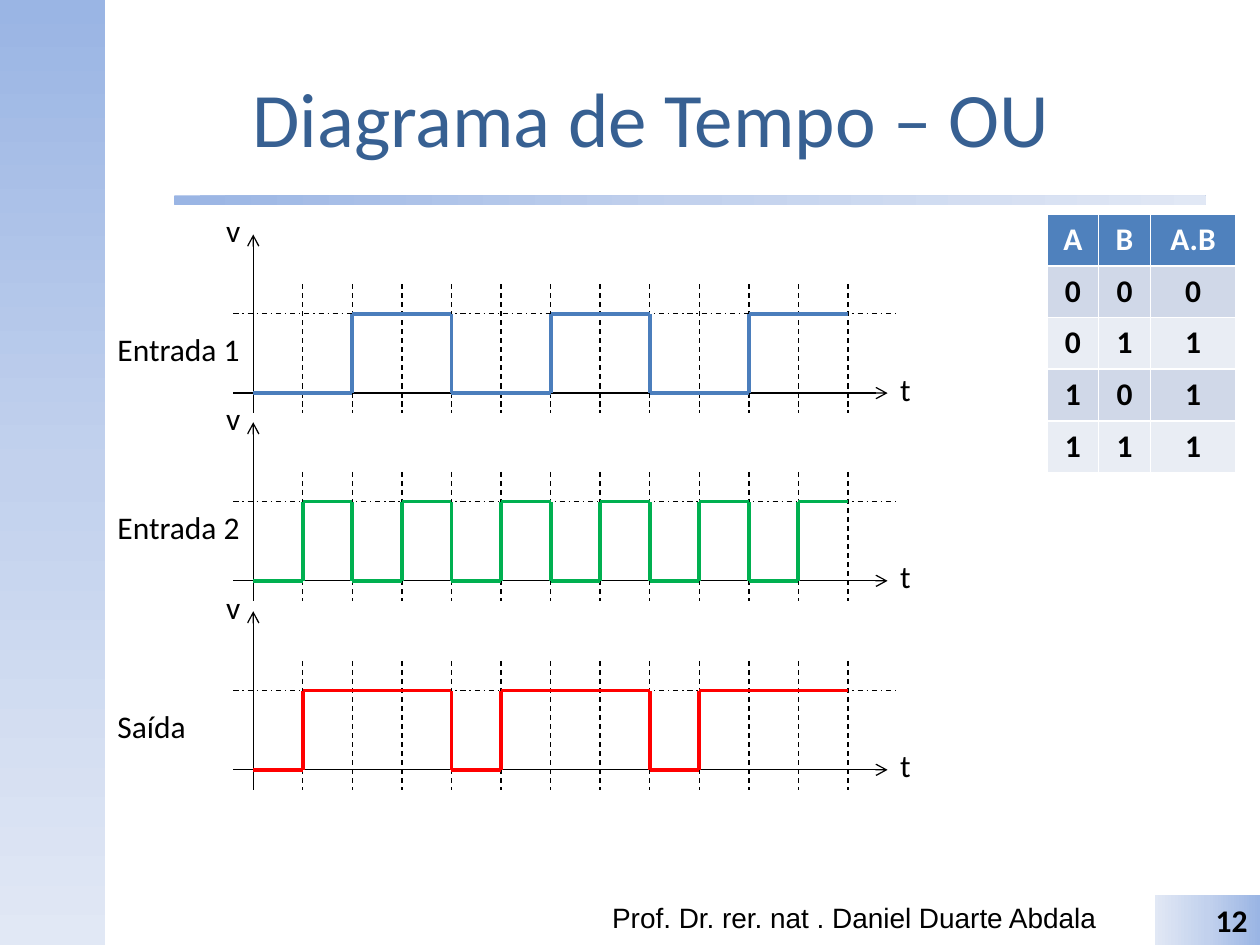
"""Build a slide with the timing diagram and truth table of an OR gate."""
from lxml import etree
from pptx import Presentation
from pptx import util as u
from pptx.dml.color import RGBColor
from pptx.enum import dml, shapes, text
from pptx.oxml.ns import qn

COLORS = {
    "black": "000000", "white": "FFFFFF", "title": "376092",
    "deep": "9AB5E4", "mid": "C2D1ED", "pale": "E1E8F5",
    "input 1": "4B7EBC", "input 2": "00B050", "output": "FF0000",
    "header": "4F81BD", "odd": "D0D8E8", "even": "E9EDF4",
}
W, H = 10, 7.5
ORIGIN, SLOTS = 2.01, 12
SLOT = 4.72 / SLOTS
HIGH = -1.6


def write(frame, content, size=18, font="Calibri", color="black", bold=False,
          align="LEFT", anchor="TOP", wrap=True):
    frame.word_wrap = wrap
    frame.auto_size = text.MSO_AUTO_SIZE.NONE if wrap else text.MSO_AUTO_SIZE.SHAPE_TO_FIT_TEXT
    frame.vertical_anchor = text.MSO_ANCHOR[f"{anchor}"]
    paragraph = frame.paragraphs[0]
    paragraph.alignment = text.PP_ALIGN[align]
    run = paragraph.add_run()
    run.text = content
    run.font.size, run.font.name, run.font.bold = u.Pt(size), font, bold
    run.font.color.rgb = RGBColor.from_string(COLORS[color])


def draw_line(canvas, base, start, end, color="black", width=0.75, dash=None, arrow=False):
    (x1, y1), (x2, y2) = [
        (u.Inches(ORIGIN + col * SLOT), u.Inches(base + row * SLOT)) for col, row in (start, end)]
    stroke = canvas.add_connector(shapes.MSO_CONNECTOR.STRAIGHT, x1, y1, x2, y2)
    stroke.line.color.rgb = RGBColor.from_string(COLORS[color])
    stroke.line.width = u.Pt(width)
    if dash:
        stroke.line.dash_style = dash
    properties = stroke._element.spPr
    if arrow:
        etree.SubElement(properties.find(qn("a:ln")), qn("a:tailEnd"), type="arrow")
    etree.SubElement(properties, qn("a:effectLst"))


deck = Presentation()
deck.slide_width, deck.slide_height = u.Inches(W), u.Inches(H)
slide = deck.slides.add_slide(deck.slide_layouts[5])

heading = slide.shapes.title
heading.left, heading.top, heading.width, heading.height = map(u.Inches, (W / 12, 0.3, 8.67, 1.25))
write(heading.text_frame, "Diagrama de Tempo – OU", size=44, color="title",
      align="CENTER", anchor="MIDDLE")

bands = [
    ("RECTANGLE", (0, 0, W / 12, H), 270, ""),
    ("ROUNDED_RECTANGLE", (1.38, 1.55, 8.19, 0.08), 0, ""),
    ("RECTANGLE", (W * 11 / 12, 7.1, W / 12, 0.4), 180, "12"),
]
for outline, place, angle, page in bands:
    band = slide.shapes.add_shape(shapes.MSO_SHAPE[outline], *map(u.Inches, place))
    band.shadow.inherit = False
    band.line.fill.background()
    band.fill.gradient()
    band.fill.gradient_angle = angle
    stops = band._element.spPr.find(qn("a:gradFill")).find(qn("a:gsLst"))
    for stop in list(stops):
        stops.remove(stop)
    for share, shade in ((0, "deep"), (50, "mid"), (100, "pale")):
        stop = etree.SubElement(stops, qn("a:gs"), pos=str(share * 1000))
        etree.SubElement(stop, qn("a:srgbClr"), val=COLORS[shade])
    if page:
        write(band.text_frame, page, bold=True, align="RIGHT", anchor="MIDDLE")

author = slide.shapes.add_textbox(*map(u.Inches, (4.76, 7.1, 4.19, 0.4)))
write(author.text_frame, "Prof. Dr. rer. nat . Daniel Duarte Abdala", size=16, font="Arial")

first = [slot // 2 % 2 for slot in range(SLOTS)]
second = [slot % 2 for slot in range(SLOTS)]
either = [a | b for a, b in zip(first, second)]
signals = [
    ("Entrada 1", "input 1", 3.12, first, 2.57, 1.18),
    ("Entrada 2", "input 2", 4.61, second, 3.98, 1.18),
    ("Saída", "output", 6.11, either, 5.56, 0.75),
]
for name, color, base, levels, name_top, name_width in signals:
    axes = slide.shapes.add_group_shape().shapes
    draw_line(axes, base, (-0.4, 0), (12.8, 0), arrow=True)
    draw_line(axes, base, (0, 0.4), (0, -3.2), arrow=True)
    for tick in range(1, SLOTS + 1):
        draw_line(axes, base, (tick, -2.2), (tick, 0.4), dash=dml.MSO_LINE.DASH)
    for axis_name, col, row, width in (("t", 12.8, -0.6, 0.29), ("v", -0.8, -3.8, 0.32)):
        place = (ORIGIN + col * SLOT, base + row * SLOT, width, 0.4)
        write(axes.add_textbox(*map(u.Inches, place)).text_frame, axis_name, wrap=False)
    draw_line(axes, base, (-0.4, HIGH), (13, HIGH), dash=dml.MSO_LINE.DASH_DOT)

    for slot, level in enumerate(levels):
        row = level * HIGH
        if slot and level != levels[slot - 1]:
            draw_line(slide.shapes, base, (slot, 0), (slot, HIGH), color, 2.25)
        draw_line(slide.shapes, base, (slot, row), (slot + 1, row), color, 2.25)

    label = slide.shapes.add_textbox(*map(u.Inches, (W / 12, name_top, name_width, 0.4)))
    write(label.text_frame, name, wrap=False)

truth = [["A", "B", "A.B"]] + [[str(a), str(b), str(a | b)] for a in (0, 1) for b in (0, 1)]
table = slide.shapes.add_table(5, 3, *map(u.Inches, (8.31, 1.7, 1.5, 2.05))).table
for column, width in zip(table.columns, (0.41, 0.41, 0.68)):
    column.width = u.Inches(width)
for r, values in enumerate(truth):
    shade = "header" if r == 0 else "odd" if r % 2 else "even"
    for c, value in enumerate(values):
        cell = table.cell(r, c)
        cell.fill.solid()
        cell.fill.fore_color.rgb = RGBColor.from_string(COLORS[shade])
        write(cell.text_frame, value, bold=True, align="CENTER",
              color="black" if r else "white")

deck.save("out.pptx")
